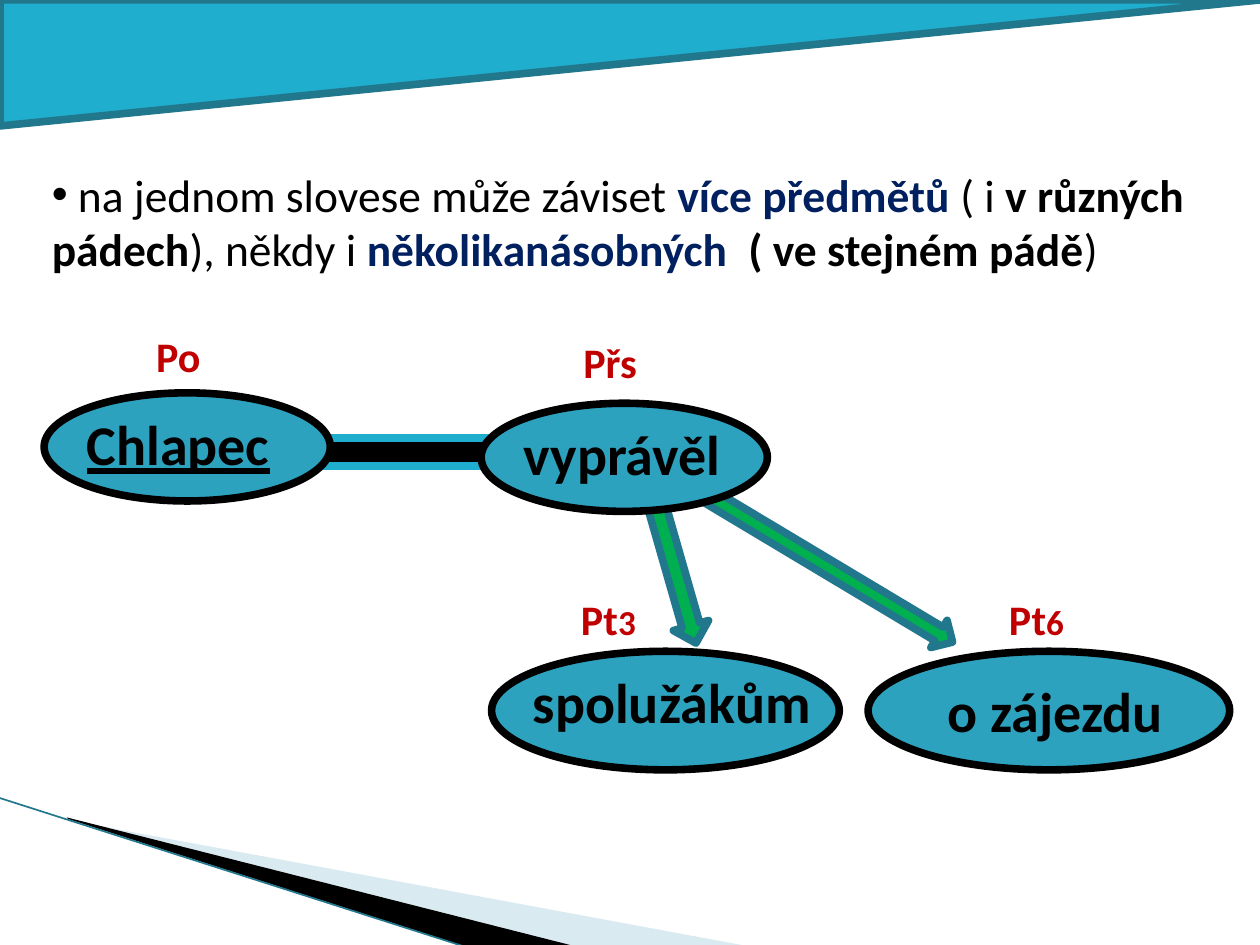
from dataclasses import dataclass

from lxml.etree import SubElement
from pptx import Presentation
from pptx.dml.color import RGBColor
from pptx.enum.shapes import MSO_CONNECTOR as Link, MSO_SHAPE as Shape
from pptx.enum.text import MSO_ANCHOR as Anchor, MSO_AUTO_SIZE as Fit, PP_ALIGN as Align
from pptx.oxml.ns import qn
from pptx.util import Cm, Pt


@dataclass(frozen=True)
class Theme:
    font: str = "Calibri"
    ink: str = "000000"
    navy: str = "002060"
    red: str = "C00000"
    green: str = "00B050"
    oval: str = "2DA2BF"
    cyan: str = "1FAECD"
    teal: str = "21788D"
    pale: str = "A0CBDC"
    word: int = 32
    body: int = 26
    label: int = 24
    case: int = 20
    outline: float = 4.33
    hairline: float = 0.95


@dataclass(frozen=True)
class Box:
    left: float
    top: float
    width: float
    height: float

    def lengths(self) -> tuple:
        return Cm(self.left), Cm(self.top), Cm(self.width), Cm(self.height)


@dataclass(frozen=True)
class Figure:
    kind: Shape
    box: Box
    fill: str
    line: str
    rotation: float = 0


@dataclass(frozen=True)
class Run:
    text: str
    size: int
    color: str
    bold: bool = True
    underline: bool = False


@dataclass(frozen=True)
class Caption:
    box: Box
    runs: tuple
    align: Align = Align.LEFT
    wrap: bool = False


T = Theme()


def oval(left: float, top: float, width: float, height: float) -> Figure:
    return Figure(Shape.OVAL, Box(left, top, width, height), T.oval, T.ink)


def word(text: str, left: float, top: float, width: float, underline: bool = False,
         align: Align = Align.LEFT, wrap: bool = False) -> Caption:
    run = Run(text, T.word, T.ink, underline=underline)
    return Caption(Box(left, top, width, 1.63), (run,), align, wrap)


def label(text: str, left: float, top: float, width: float, case: str = "",
          wrap: bool = False) -> Caption:
    runs = [Run(text, T.label, T.red)]
    if case:
        runs.append(Run(case, T.case, T.red))
    return Caption(Box(left, top, width, 1.27), tuple(runs), wrap=wrap)


WEDGES = (
    (((1.4, 16.54), (15.11, 19.08), (11.58, 19.08), (1.4, 16.51)), T.pale, 40),
    (((1.35, 16.48), (11.61, 19.08), (9.45, 19.1), (1.37, 16.51)), T.ink, 100),
)
FIGURES = (
    Figure(Shape.LEFT_ARROW, Box(12.22, 11.23, 2.84, 0.74), T.green, T.teal, 254),
    Figure(Shape.LEFT_ARROW, Box(13.87, 11.15, 5.74, 0.64), T.green, T.teal, 210.9),
    Figure(Shape.MATH_MINUS, Box(5.89, 7.92, 4.6, 2.39), T.ink, T.cyan),
    oval(17.5, 13.13, 7.29, 2.39),
    oval(9.91, 13.13, 7.01, 2.39),
    oval(0.89, 7.92, 5.77, 2.18),
    oval(9.7, 8.13, 5.77, 2.18),
    Figure(Shape.RIGHT_TRIANGLE, Box(11.43, -11.43, 2.54, 25.4), T.cyan, T.teal, 90),
)
CAPTIONS = (
    word("spolužákům", 10.49, 13.34, 7.04, wrap=True),
    word("Chlapec", 1.5, 8.13, 4.24, underline=True),
    word("vyprávěl", 10.31, 8.33, 4.78),
    word("o zájezdu", 18.82, 13.51, 4.9, align=Align.CENTER),
    label("Po", 2.9, 6.53, 1.42),
    label("Přs", 11.51, 6.65, 2.21, wrap=True),
    label("Pt", 11.46, 11.84, 1.63, case="3"),
    label("Pt", 20.09, 11.84, 1.63, case="6"),
)
RULE = Caption(Box(0.79, 3.23, 23.9, 4.7), (
    Run(" na jednom slovese může záviset ", T.body, T.ink, False),
    Run("více předmětů ", T.body, T.navy),
    Run("( i ", T.body, T.ink, False),
    Run("v různých pádech", T.body, T.ink),
    Run("), někdy i ", T.body, T.ink, False),
    Run("několikanásobných  ", T.body, T.navy),
    Run("( ve stejném pádě", T.body, T.ink),
    Run(")", T.body, T.ink, False),
), wrap=True)


def rgb(value: str) -> RGBColor:
    return RGBColor.from_string(value)


def draw_wedge(slide, points: tuple, fill: str, opacity: int) -> None:
    grid = [(x * 100, y * 100) for x, y in points]
    builder = slide.shapes.build_freeform(*grid[0], scale=Cm(0.01))
    builder.add_line_segments(grid[1:], close=True)
    s = builder.convert_to_shape()
    s.shadow.inherit = False
    s.fill.solid()
    s.fill.fore_color.rgb = rgb(fill)
    s.line.fill.background()
    if opacity < 100:
        color = s._element.spPr.find(qn("a:solidFill"))[0]
        SubElement(color, qn("a:alpha")).set("val", str(opacity * 1000))


def draw_edge(slide) -> None:
    s = slide.shapes.add_connector(Link.STRAIGHT, Cm(-0.03), Cm(16.08), Cm(9.42), Cm(19.1))
    s.line.color.rgb = rgb(T.teal)
    s.line.width = Pt(T.hairline)
    SubElement(s._element.spPr, qn("a:effectLst"))


def draw_figure(slide, figure: Figure) -> None:
    s = slide.shapes.add_shape(figure.kind, *figure.box.lengths())
    s.shadow.inherit = False
    s.rotation = figure.rotation
    s.fill.solid()
    s.fill.fore_color.rgb = rgb(figure.fill)
    s.line.color.rgb = rgb(figure.line)
    s.line.width = Pt(T.outline)


def write_caption(s, caption: Caption) -> None:
    tf = s.text_frame
    tf.word_wrap = caption.wrap
    tf.auto_size = Fit.SHAPE_TO_FIT_TEXT
    tf.vertical_anchor = Anchor.TOP
    p = tf.paragraphs[0]
    p.alignment = caption.align
    for run in caption.runs:
        r = p.add_run()
        r.text = run.text
        r.font.name = T.font
        r.font.size = Pt(run.size)
        r.font.bold = run.bold
        r.font.underline = run.underline
        r.font.color.rgb = rgb(run.color)


def write_rule(s) -> None:
    s.left, s.top, s.width, s.height = RULE.box.lengths()
    p = s.text_frame.paragraphs[0]
    p.space_before = Pt(0)
    props = p._p.get_or_add_pPr()
    props.set("marL", "0")
    props.set("indent", "0")
    SubElement(props, qn("a:buFont")).set("typeface", "Arial")
    SubElement(props, qn("a:buChar")).set("char", "•")
    write_caption(s, RULE)


def main() -> None:
    prs = Presentation()
    prs.slide_width, prs.slide_height = Cm(25.4), Cm(19.05)
    slide = prs.slides.add_slide(prs.slide_layouts[1])
    title = slide.shapes.title._element
    title.getparent().remove(title)
    write_rule(slide.placeholders[1])
    for wedge in WEDGES:
        draw_wedge(slide, *wedge)
    draw_edge(slide)
    for figure in FIGURES:
        draw_figure(slide, figure)
    for caption in CAPTIONS:
        write_caption(slide.shapes.add_textbox(*caption.box.lengths()), caption)
    prs.save("out.pptx")


if __name__ == "__main__":
    main()
